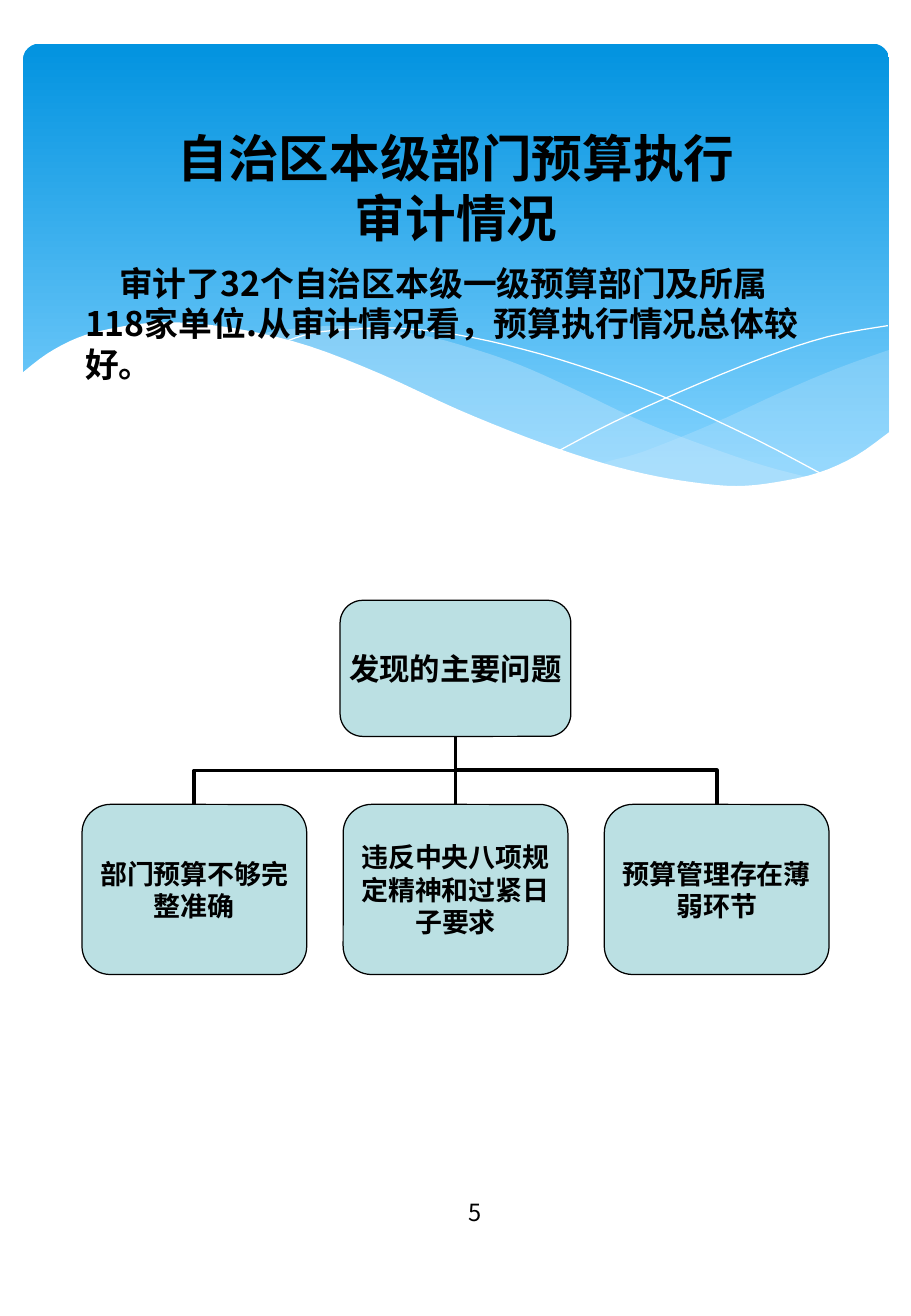
from lxml import etree
from pptx import Presentation
from pptx.dml.color import RGBColor
from pptx.enum.shapes import MSO_CONNECTOR, MSO_SHAPE
from pptx.enum.text import MSO_ANCHOR, PP_ALIGN
from pptx.oxml.ns import qn
from pptx.util import Inches, Pt

ROUND = MSO_SHAPE.ROUNDED_RECTANGLE
STRAIGHT, ELBOW = MSO_CONNECTOR.STRAIGHT, MSO_CONNECTOR.ELBOW
LEFT, CENTER = PP_ALIGN.LEFT, PP_ALIGN.CENTER
TOP, MIDDLE = MSO_ANCHOR.TOP, MSO_ANCHOR.MIDDLE
BLACK = RGBColor(0x00, 0x00, 0x00)
WHITE = RGBColor(0xFF, 0xFF, 0xFF)
BLUE = RGBColor(0x02, 0x93, 0xE0)
SKY = RGBColor(0x83, 0xD3, 0xFE)
MIST = RGBColor(0xC6, 0xE7, 0xFC)
TEAL = RGBColor(0xBB, 0xE0, 0xE3)
SANS = "Noto Sans CJK SC"

BACK = [(7.32, 2.88), (6.9, 3.03), (6.45, 3.22), (5.84, 3.5), (5.29, 3.72),
        (4.96, 3.83), (5.39, 3.94), (5.77, 4), (6.1, 4.01), (6.47, 3.97),
        (6.79, 3.88), (7.07, 3.75), (7.32, 3.57)]
FRONT = [(6.7, 3.94), (6.28, 3.83), (5.81, 3.67), (5.29, 3.47), (4.72, 3.2),
         (4.27, 3), (3.86, 2.86), (3.48, 2.76), (2.99, 2.69), (2.58, 2.69),
         (2.15, 2.76), (2.57, 2.88), (3.03, 3.05), (3.37, 3.2), (3.97, 3.47),
         (4.51, 3.69), (4.99, 3.85), (5.42, 3.95), (5.8, 4.01), (6.21, 4.02),
         (6.5, 3.98), (6.7, 3.94)]
FALL = [(2.32, 2.82), (2.58, 2.74), (2.9, 2.71), (3.24, 2.7), (3.67, 2.74),
        (4.17, 2.84), (4.77, 3.01), (5.45, 3.26), (6.23, 3.62), (6.8, 3.92)]
RISE = [(4.6, 3.71), (5.04, 3.48), (5.61, 3.22), (6.27, 2.95), (6.82, 2.77),
        (7.31, 2.68)]
EDGE = [(7.33, 3.55), (7.05, 3.75), (6.74, 3.89), (6.38, 3.97), (6.06, 4),
        (5.71, 3.97), (5.31, 3.9), (4.86, 3.78), (4.34, 3.6), (3.77, 3.37),
        (3.14, 3.08), (2.55, 2.85), (2.03, 2.72), (1.58, 2.66), (1.21, 2.66),
        (0.89, 2.71), (0.64, 2.78), (0.39, 2.91), (0.17, 3.08)]


def smooth(pts, steps=4):
    ends = [pts[0]] + pts + [pts[-1]]
    out = [pts[0]]
    for a, b, c, d in zip(ends, ends[1:], ends[2:], ends[3:]):
        for i in range(1, steps + 1):
            t = i / steps
            out.append(tuple(
                (2 * q + (r - p) * t + (2 * p - 5 * q + 4 * r - s) * t ** 2
                 + (3 * q - p - 3 * r + s) * t ** 3) / 2
                for p, q, r, s in zip(a, b, c, d)))
    return out


class Page:
    def __init__(self, deck):
        self.slide = deck.slides.add_slide(deck.slide_layouts[5])
        self.shapes = self.slide.shapes

    def put(self, shape, lines, align, anchor, pads):
        frame = shape.text_frame
        frame.word_wrap = True
        frame.vertical_anchor = anchor
        frame.margin_left = frame.margin_right = Inches(pads[0])
        frame.margin_top = frame.margin_bottom = Inches(pads[1])
        for i, (text, size, bold, face, dent) in enumerate(lines):
            para = frame.add_paragraph() if i else frame.paragraphs[0]
            para.alignment = align
            if dent:
                para._p.get_or_add_pPr().set("indent", str(Inches(dent)))
            run = para.add_run()
            run.text = text
            font = run.font
            font.name, font.size, font.bold = face, Pt(size), bold
            font.color.rgb = BLACK
            east = etree.SubElement(run._r.get_or_add_rPr(), qn("a:ea"))
            east.set("typeface", SANS)

    def title(self, box, lines):
        shape = self.shapes.title
        tree = shape._element.getparent()
        tree.append(shape._element)
        shape.left, shape.top, shape.width, shape.height = map(Inches, box)
        self.put(shape, lines, CENTER, TOP, (0.11, 0.05))

    def text(self, box, line, align=LEFT, anchor=TOP):
        shape = self.shapes.add_textbox(*map(Inches, box))
        self.put(shape, [line], align, anchor, (0.11, 0.05))

    def panel(self, box):
        shape = self.shapes.add_shape(ROUND, *map(Inches, box))
        shape.shadow.inherit = False
        shape.adjustments[0] = 0.034
        shape.line.fill.background()
        shape.fill.gradient()
        shape.fill.gradient_angle = 270
        for stop, color, spot in zip(shape.fill.gradient_stops, (BLUE, SKY), (0, 0.9)):
            stop.color.rgb, stop.position = color, spot

    def wave(self, pts, fill=None, alpha=100):
        pts = [(Inches(x), Inches(y)) for x, y in pts]
        pen = self.shapes.build_freeform(*pts[0], scale=1.0)
        pen.add_line_segments(pts[1:], close=fill is not None)
        shape = pen.convert_to_shape()
        shape.shadow.inherit = False
        if fill is None:
            shape.fill.background()
            shape.line.color.rgb = WHITE
            shape.line.width = Pt(0)
            return
        shape.line.fill.background()
        shape.fill.solid()
        shape.fill.fore_color.rgb = fill
        if alpha < 100:
            color = shape._element.spPr.find(".//" + qn("a:srgbClr"))
            etree.SubElement(color, qn("a:alpha")).set("val", str(alpha * 1000))

    def box(self, box, text, size):
        shape = self.shapes.add_shape(ROUND, *map(Inches, box))
        shape.shadow.inherit = False
        shape.adjustments[0] = 0.167
        shape.fill.solid()
        shape.fill.fore_color.rgb = TEAL
        shape.line.color.rgb = BLACK
        shape.line.width = Pt(0.75)
        self.put(shape, [(text, size, True, SANS, 0)], CENTER, MIDDLE, (0, 0))
        return shape

    def link(self, kind, start, end):
        line = self.shapes.add_connector(kind, *map(Inches, start + end))
        line.line.color.rgb = BLACK
        line.line.width = Pt(2.25)
        etree.SubElement(line._element.spPr, qn("a:effectLst"))
        return line

    def branch(self, start, end):
        mid_x, mid_y = (start[0] + end[0]) / 2, (start[1] + end[1]) / 2
        dx, dy = (start[0] - end[0]) / 2, (start[1] - end[1]) / 2
        line = self.link(ELBOW, (mid_x - dy, mid_y + dx), (mid_x + dy, mid_y - dx))
        line._element.spPr.find(qn("a:xfrm")).set("rot", str(270 * 60000))


def main():
    deck = Presentation()
    deck.slide_width, deck.slide_height = Inches(7.5), Inches(10.83)
    page = Page(deck)
    page.panel((0.19, 0.36, 7.13, 3.9))
    page.wave(smooth(BACK), MIST, 29)
    page.wave(smooth(FRONT), MIST, 40)
    page.wave(smooth(FALL))
    page.wave(smooth(RISE))
    page.wave(smooth(EDGE) + [(0.17, 4.75), (7.33, 4.75)], WHITE)
    page.title((0.86, 0.99, 5.79, 1.12), [
        (text, 30, True, "Arial", 0) for text in ("自治区本级部门预算执行", "审计情况")])
    page.text((0.59, 2.11, 6.32, 1.29), (
        "审计了32个自治区本级一级预算部门及所属118家单位.从审计情况看，预算执行情况总体较好。",
        20, True, SANS, 0.28))
    page.text((3.28, 9.59, 1.26, 0.77), ("5", 14, False, SANS, 0), CENTER, MIDDLE)

    mid, base, top, wide, step = 3.75, 6.06, 6.62, 1.85, 2.15
    root = page.box((2.8, 4.94, 1.9, 1.12), "发现的主要问题", 18)
    issues = ("部门预算不够完整准确", "违反中央八项规定精神和过紧日子要求", "预算管理存在薄弱环节")
    for i, text in enumerate(issues):
        x = mid + (i - 1) * step
        child = page.box((x - wide / 2, top, wide, 1.4), text, 16)
        if i == 1:
            line = page.link(STRAIGHT, (x, top), (mid, base))
            line.begin_connect(child, 0)
            line.end_connect(root, 2)
        else:
            page.branch((x, top), (mid, base))
    deck.save("out.pptx")


if __name__ == "__main__":
    main()
